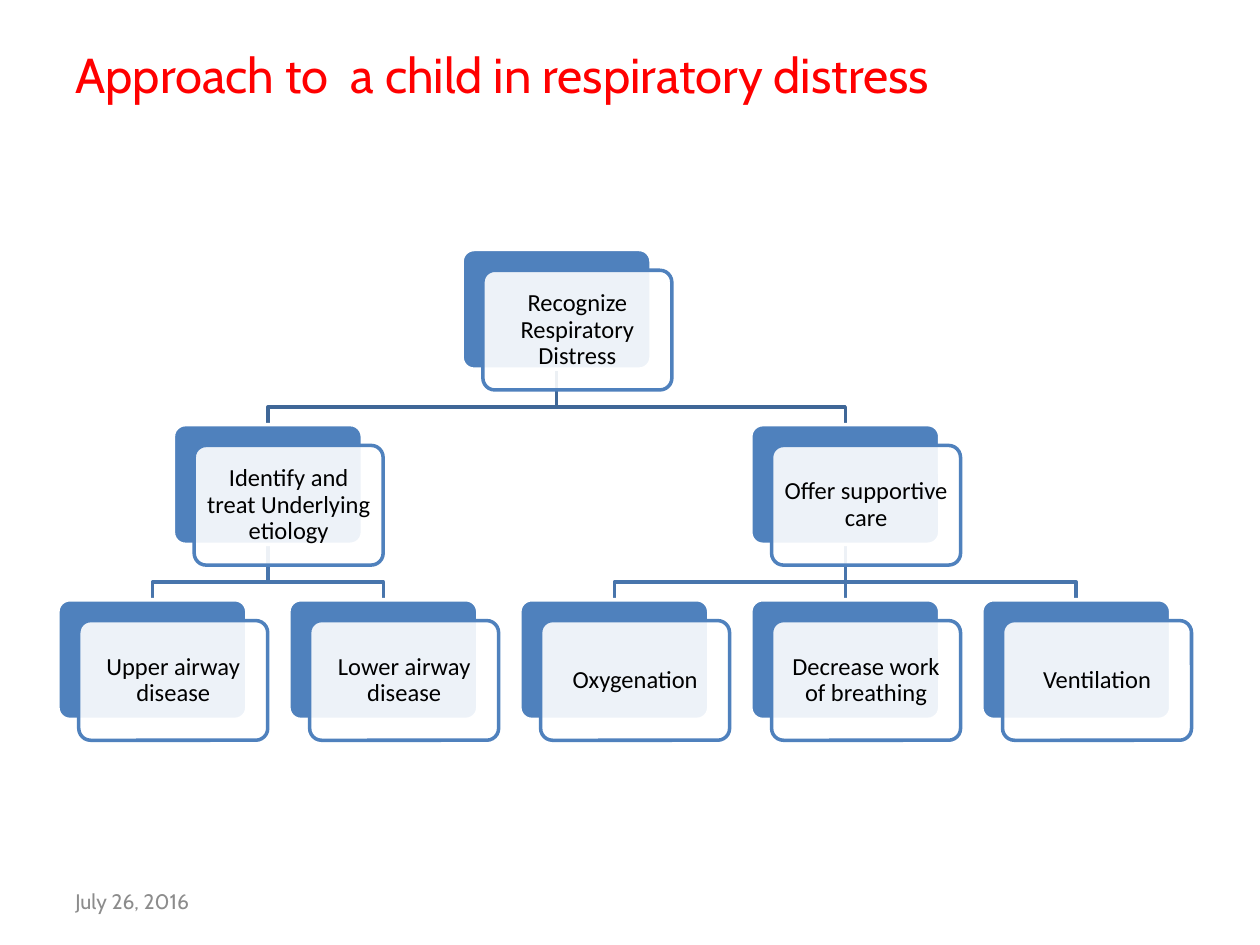
from lxml import etree
from pptx import Presentation
from pptx.dml.color import RGBColor
from pptx.enum.shapes import MSO_CONNECTOR, MSO_SHAPE
from pptx.enum.text import MSO_ANCHOR, PP_ALIGN
from pptx.oxml.ns import qn
from pptx.util import Inches, Pt

COLORS = {
    "title": "FF0000", "date": "8C8C8C", "text": "000000",
    "card": "4F81BD", "white": "FFFFFF",
    "link_1": "3F6797", "link_2": "4875AC",
}
CARD_W, CARD_H = Inches(1.5), Inches(0.95)
OFFSET = Inches(0.165)      # shift of the front card from the back card
TEXT_INSET = Inches(0.03)
COL_STEP, ROW_STEP = Inches(1.833), Inches(1.39)
ELBOW = Inches(0.3)         # drop from a parent to the horizontal run

TREE = ("Recognize Respiratory Distress", [
    ("Identify and treat Underlying etiology", [
        ("Upper airway disease", []),
        ("Lower airway disease", []),
    ]),
    ("Offer supportive care", [
        ("Oxygenation", []),
        ("Decrease work of breathing", []),
        ("Ventilation", []),
    ]),
])


def rgb(name):
    return RGBColor.from_string(COLORS[name])


def add_text(s, box, text, size, font, color, anchor, align=PP_ALIGN.LEFT, margin=None):
    tf = s.shapes.add_textbox(*box).text_frame
    tf.word_wrap = True
    tf.vertical_anchor = anchor
    if margin is not None:
        tf.margin_left = tf.margin_right = tf.margin_top = tf.margin_bottom = margin
    p = tf.paragraphs[0]
    p.text = text
    p.alignment = align
    p.font.size, p.font.name = Pt(size), font
    p.font.color.rgb = rgb(color)
    return p


def add_card(s, left, top, fill, line, alpha=None):
    sp = s.shapes.add_shape(MSO_SHAPE.ROUNDED_RECTANGLE, left, top, CARD_W, CARD_H)
    sp.adjustments[0] = 0.1
    sp.shadow.inherit = False
    sp.fill.solid()
    sp.fill.fore_color.rgb = rgb(fill)
    if alpha:
        clr = sp._element.spPr.find(qn("a:solidFill"))[0]
        etree.SubElement(clr, qn("a:alpha")).set("val", str(alpha * 1000))
    sp.line.color.rgb = rgb(line)
    sp.line.width = Pt(2)
    return sp


def add_node(s, left, top, text):
    """Two overlapping cards with a label on the front one."""
    back = add_card(s, left, top, "card", "white")
    x, y = left + OFFSET, top + OFFSET
    add_card(s, x, y, "white", "card", alpha=90)
    box = (x + TEXT_INSET, y + TEXT_INSET, CARD_W - 2 * TEXT_INSET, CARD_H - 2 * TEXT_INSET)
    p = add_text(s, box, text, 14, "Calibri", "text", MSO_ANCHOR.MIDDLE,
                 PP_ALIGN.CENTER, Inches(0.06))
    p.line_spacing = 0.9
    return back


def add_link(s, parent, child, color):
    """Line from a parent's bottom to a child's top, behind the cards."""
    x1, y1 = parent.left + CARD_W // 2, parent.top + CARD_H
    x2, y2 = child.left + CARD_W // 2, child.top
    if abs(x1 - x2) < Inches(0.01):
        link = s.shapes.add_connector(MSO_CONNECTOR.STRAIGHT, x1, y1, x2, y2)
        link.begin_connect(parent, 2)
        link.end_connect(child, 0)
        etree.SubElement(link._element.spPr, qn("a:effectLst"))
    else:
        path = s.shapes.build_freeform(x1, y1)
        path.add_line_segments([(x1, y1 + ELBOW), (x2, y1 + ELBOW), (x2, y2)], close=False)
        link = path.convert_to_shape()
        link.fill.background()
        link.shadow.inherit = False
    link.line.color.rgb = rgb(color)
    link.line.width = Pt(2)
    link._element.getparent().insert(2, link._element)


def count_leaves(node):
    return sum(map(count_leaves, node[1])) or 1


def add_tree(s, left, top, node, level=1):
    """Leaves fill columns from the left; each parent is centred over its children."""
    text, children = node
    backs, x = [], left
    for child in children:
        backs.append(add_tree(s, x, top + ROW_STEP, child, level + 1))
        x += COL_STEP * count_leaves(child)
    if backs:
        left = (backs[0].left + backs[-1].left) // 2
    parent = add_node(s, left, top, text)
    for back in backs:
        add_link(s, parent, back, f"link_{level}")
    return parent


def main():
    prs = Presentation()
    prs.slide_width, prs.slide_height = Inches(10), Inches(7.5)
    s = prs.slides.add_slide(prs.slide_layouts[6])

    # Title
    add_text(s, (Inches(0.5), Inches(0.3), Inches(9), Inches(1.25)),
             "Approach to  a child in respiratory distress", 28, "Cabin", "title", MSO_ANCHOR.TOP)
    # Hierarchy
    add_tree(s, Inches(0.46), Inches(1.98), TREE)
    # Date
    add_text(s, (Inches(0.5), Inches(6.95), Inches(2.33), Inches(0.4)),
             "July 26, 2016", 12, "Cabin", "date", MSO_ANCHOR.MIDDLE)

    prs.save("out.pptx")


if __name__ == "__main__":
    main()
